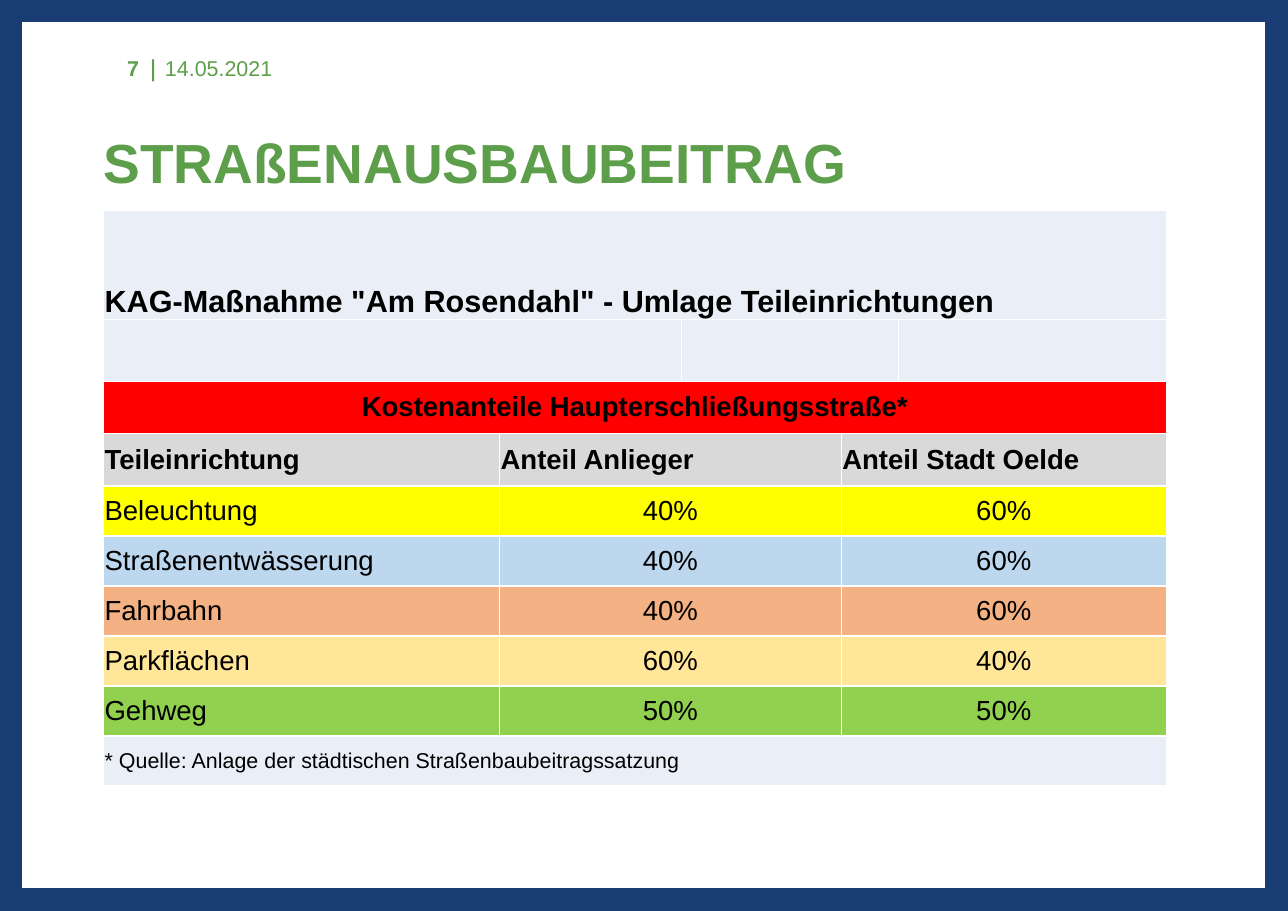
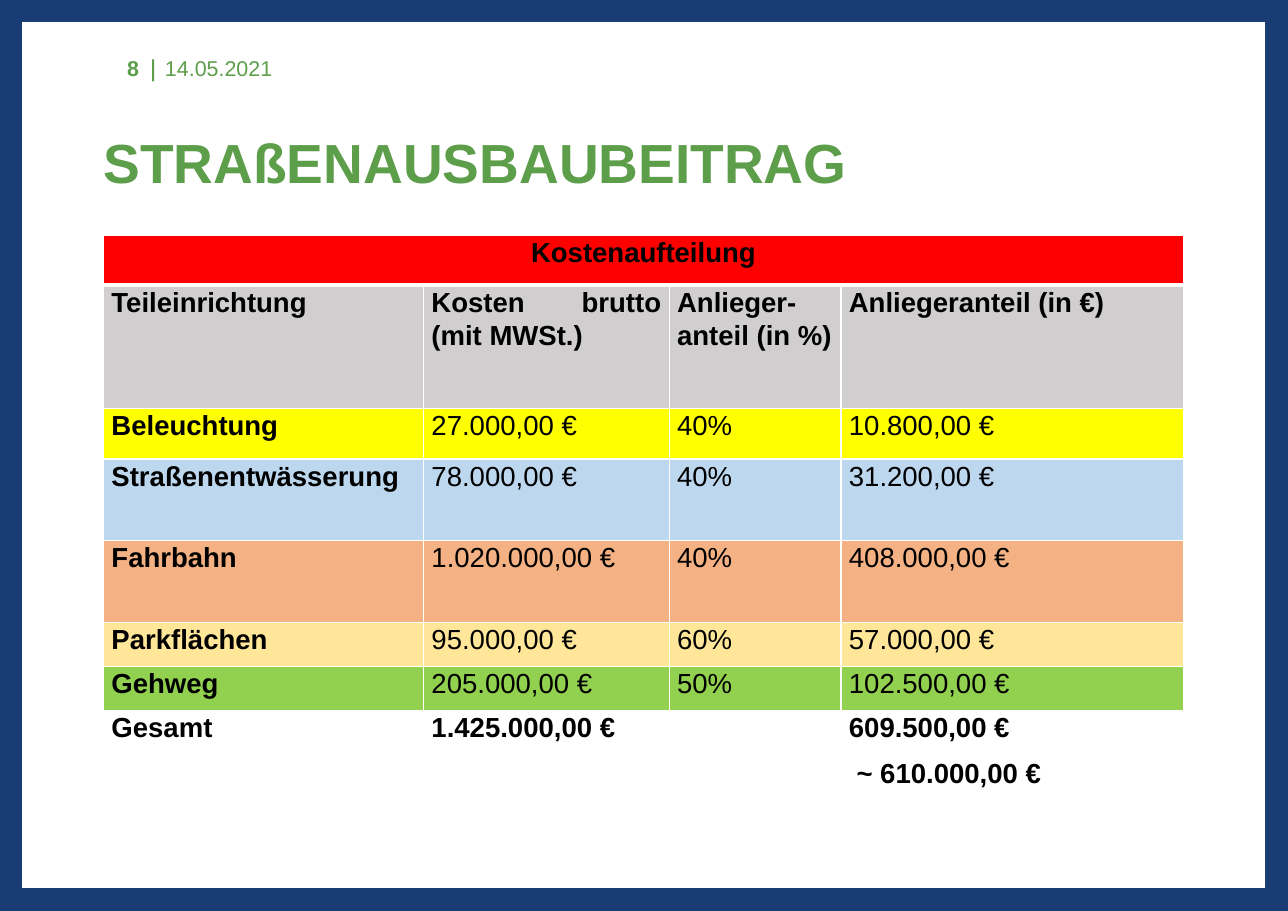
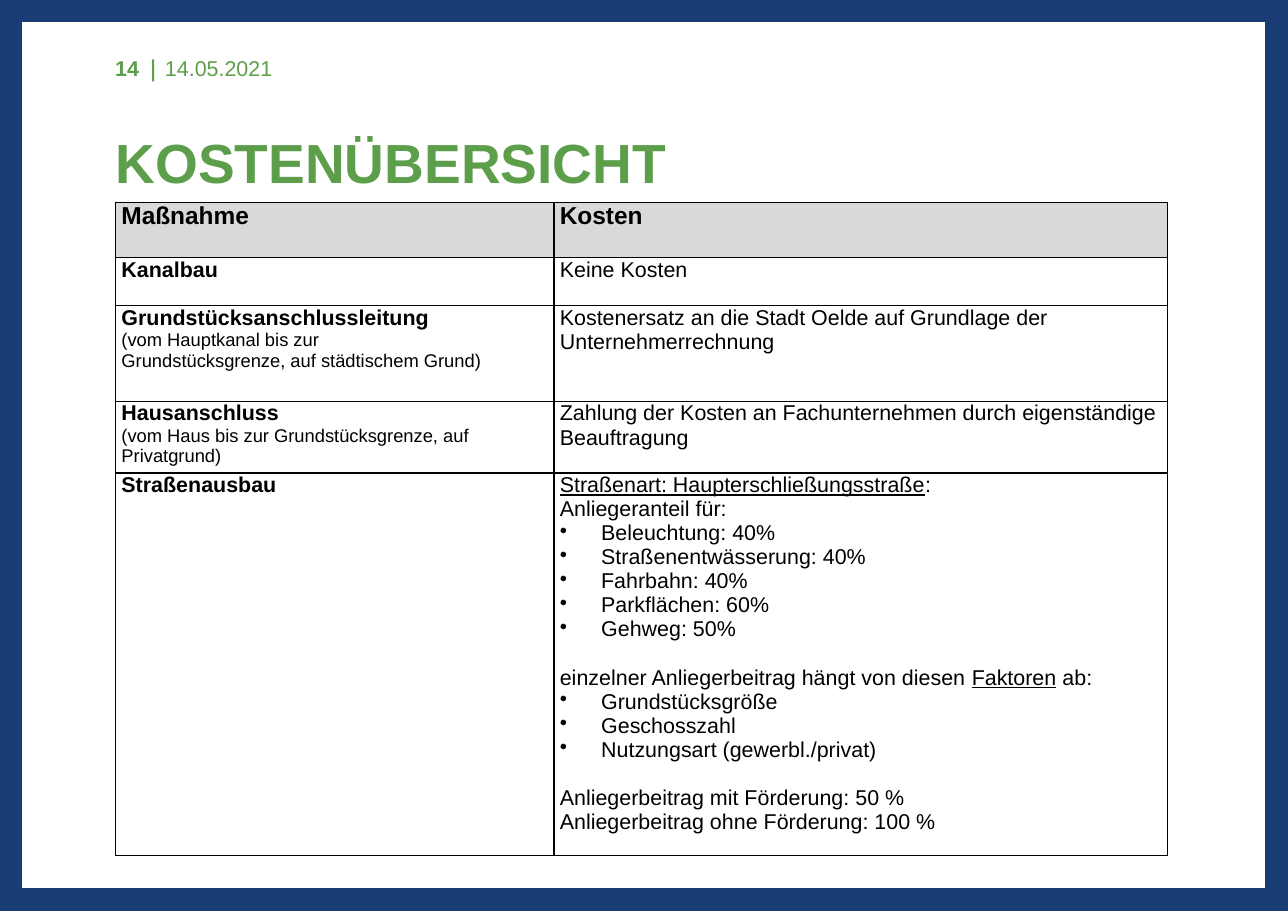
from dataclasses import dataclass

from lxml.etree import SubElement
from pptx import Presentation
from pptx.dml.color import RGBColor
from pptx.enum.shapes import MSO_SHAPE
from pptx.enum.text import MSO_ANCHOR, MSO_AUTO_SIZE, PP_ALIGN
from pptx.oxml.ns import qn
from pptx.util import Pt

# Palette
NAVY, GREEN, BLACK, WHITE = "193C75", "5D9E4A", "000000", "FFFFFF"
RED, PALE, SILVER, GREY = "FF0000", "EAEFF7", "D9D9D9", "D0CECE"
PART_COLORS = ["FFFF00", "BDD7EE", "F4B183", "FFE699", "92D050"]

# Content used on several slides
PARTS = ["Beleuchtung", "Straßenentwässerung", "Fahrbahn", "Parkflächen", "Gehweg"]
RESIDENT_SHARES = [40, 40, 40, 60, 50]
DATE = "14.05.2021"


def rgb(hex_color):
    return RGBColor.from_string(hex_color)


@dataclass
class Para:
    text: str
    size: float = None
    bold: bool = None
    underlined: str = ""
    bullet: bool = False
    indent: float = 0
    before: float = 0


class Deck:
    font = "Arial"

    def __init__(self, width, height):
        self.prs = Presentation()
        self.prs.slide_width, self.prs.slide_height = Pt(width), Pt(height)
        self.slide = None

    def new_slide(self, heading, number, left):
        """Start a slide with frame, page header and title."""
        self.slide = self.prs.slides.add_slide(self.prs.slide_layouts[5])
        border = self.rect(7.2, 7.2, 827.6, 581)
        border.fill.background()
        border.line.color.rgb = rgb(NAVY)
        border.line.width = Pt(15)
        SubElement(border.line._get_or_add_ln(), qn("a:miter"), lim="800000")

        divider = self.rect(99.4, 38.9, 1.4, 14.4)
        divider.fill.solid()
        divider.fill.fore_color.rgb = rgb(GREEN)
        divider.line.fill.background()

        self.header_text(100.8, 189.4, DATE)
        self.header_text(36, 62, str(number), bold=True, align=PP_ALIGN.RIGHT)

        title = self.slide.shapes.title
        title.left, title.top, title.width, title.height = Pt(left), Pt(89.3), Pt(608), Pt(48)
        frame = title.text_frame
        frame.auto_size = MSO_AUTO_SIZE.NONE
        frame.vertical_anchor = MSO_ANCHOR.TOP
        frame.margin_left = frame.margin_right = frame.margin_top = frame.margin_bottom = 0
        self.set_paras(frame, [heading], 36, True, GREEN, spacing=Pt(38))

    def rect(self, left, top, width, height):
        shape = self.slide.shapes.add_shape(
            MSO_SHAPE.RECTANGLE, Pt(left), Pt(top), Pt(width), Pt(height))
        shape.shadow.inherit = False
        return shape

    def header_text(self, left, width, text, bold=False, align=PP_ALIGN.LEFT):
        box = self.slide.shapes.add_textbox(Pt(left), Pt(28.8), Pt(width), Pt(31.7))
        box.text_frame.word_wrap = True
        box.text_frame.vertical_anchor = MSO_ANCHOR.MIDDLE
        self.set_paras(box.text_frame, [text], 14, bold, GREEN, align)

    def set_paras(self, frame, paras, size, bold=False, color=BLACK, align=PP_ALIGN.LEFT,
                  spacing=None, after=0):
        for index, item in enumerate(paras):
            para = item if isinstance(item, Para) else Para(item)
            line = frame.add_paragraph() if index else frame.paragraphs[0]
            if para.underlined:
                lead, marked, rest = para.text.partition(para.underlined)
                for piece in filter(None, (lead, marked, rest)):
                    run = line.add_run()
                    run.text = piece
                    run.font.underline = piece == marked
            else:
                line.text = para.text
            line.alignment = align
            line.space_before, line.space_after = Pt(para.before), Pt(after)
            if spacing:
                line.line_spacing = spacing
            props = line._p.get_or_add_pPr()
            if para.bullet:
                props.set("marL", str(Pt(27)))
                props.set("indent", str(-Pt(27)))
                SubElement(props, qn("a:buChar"), char="•")
            elif para.indent:
                props.set("marL", str(Pt(para.indent)))
            for run in line.runs:
                run.font.name = self.font
                run.font.size = Pt(para.size or size)
                run.font.bold = bold if para.bold is None else para.bold
                run.font.color.rgb = rgb(color)

    def table(self, left, top, columns, heights, line_color, inset, anchor):
        """Add an unfilled table with 1 pt rules around every cell."""
        table = self.slide.shapes.add_table(
            len(heights), len(columns), Pt(left), Pt(top),
            Pt(sum(columns)), Pt(sum(heights))).table
        table.first_row = table.horz_banding = False
        for column, width in zip(table.columns, columns):
            column.width = Pt(width)
        for row, height in zip(table.rows, heights):
            row.height = Pt(height)
        for cell in table.iter_cells():
            cell.margin_left = cell.margin_right = Pt(inset)
            cell.margin_top = cell.margin_bottom = 0
            cell.vertical_anchor = anchor
            props = cell._tc.get_or_add_tcPr()
            for side in ("a:lnL", "a:lnR", "a:lnT", "a:lnB"):
                rule = SubElement(props, qn(side), w=str(Pt(1)))
                SubElement(SubElement(rule, qn("a:solidFill")), qn("a:srgbClr"), val=line_color)
            cell.fill.background()
        return table

    def cell(self, table, row, column, paras=(), size=18, fill=None, span=1, **style):
        cell = table.cell(row, column)
        if span > 1:
            cell.merge(table.cell(row, column + span - 1))
        if fill:
            cell.fill.solid()
            cell.fill.fore_color.rgb = rgb(fill)
        self.set_paras(cell.text_frame, paras, size, **style)
        return cell


def cost_shares(deck):
    deck.new_slide("STRAßENAUSBAUBEITRAG", 7, 67.7)
    table = deck.table(67.7, 137.7, [258.9, 118.8, 104.6, 37.5, 175],
                       [71, 40.5, 34, 34.5] + [32.7] * 6, WHITE, 0.7, MSO_ANCHOR.MIDDLE)
    heading = deck.cell(table, 0, 0, ['KAG-Maßnahme "Am Rosendahl" - Umlage Teileinrichtungen'],
                        20, PALE, 5, bold=True)
    heading.vertical_anchor = MSO_ANCHOR.BOTTOM
    for column, span in ((0, 2), (2, 2), (4, 1)):
        deck.cell(table, 1, column, fill=PALE, span=span)
    deck.cell(table, 2, 0, ["Kostenanteile Haupterschließungsstraße*"], fill=RED, span=5,
              bold=True, align=PP_ALIGN.CENTER)

    places = ((0, 1), (1, 2), (3, 2))
    for (column, span), label in zip(places, ("Teileinrichtung", "Anteil Anlieger",
                                              "Anteil Stadt Oelde")):
        deck.cell(table, 3, column, [label], fill=SILVER, span=span, bold=True)
    for row, (part, share, color) in enumerate(zip(PARTS, RESIDENT_SHARES, PART_COLORS), 4):
        for (column, span), text in zip(places, (part, f"{share}%", f"{100 - share}%")):
            deck.cell(table, row, column, [text], fill=color, span=span,
                      align=PP_ALIGN.CENTER if column else PP_ALIGN.LEFT)
    deck.cell(table, 9, 0, ["* Quelle: Anlage der städtischen Straßenbaubeitragssatzung"],
              14, PALE, 5)


def cost_split(deck):
    deck.new_slide("STRAßENAUSBAUBEITRAG", 8, 67.7)
    table = deck.table(67.7, 153.8, [209.2, 160.6, 112.3, 223.9],
                       [32.5, 80.6, 33.1, 53.5, 53.5, 28.8, 28.8, 57], WHITE, 5.2,
                       MSO_ANCHOR.TOP)
    style = dict(spacing=1.07, after=8)
    banner = deck.cell(table, 0, 0, ["Kostenaufteilung"], fill=RED, span=4, bold=True,
                       align=PP_ALIGN.CENTER, **style)
    banner._tc.tcPr.find(qn("a:lnB")).set("w", str(Pt(3)))

    style["align"] = PP_ALIGN.JUSTIFY
    labels = ["Teileinrichtung", "Kosten brutto (mit MWSt.)", "Anlieger-anteil (in %)",
              "Anliegeranteil (in €)"]
    for column, label in enumerate(labels):
        deck.cell(table, 1, column, [label], fill=GREY, bold=True, **style)

    costs = ["27.000,00 €", "78.000,00 €", "1.020.000,00 €", "95.000,00 €", "205.000,00 €"]
    amounts = ["10.800,00 €", "31.200,00 €", "408.000,00 €", "57.000,00 €", "102.500,00 €"]
    shares = [f"{share}%" for share in RESIDENT_SHARES]
    for row, (color, *texts) in enumerate(zip(PART_COLORS, PARTS, costs, shares, amounts), 2):
        for column, text in enumerate(texts):
            deck.cell(table, row, column, [text], fill=color, bold=column == 0, **style)

    totals = {0: ["Gesamt"], 1: ["1.425.000,00 €"],
              3: ["609.500,00 €", Para("~ 610.000,00 €", indent=5)]}
    for column, paras in totals.items():
        deck.cell(table, 7, column, paras, bold=True, **style)


def cost_overview(deck):
    deck.new_slide("KOSTENÜBERSICHT", 14, 75.6)
    table = deck.table(75.6, 132.5, [286.6, 401], [36, 31.3, 62.6, 46.8, 236], BLACK, 3.8,
                       MSO_ANCHOR.TOP)
    for column, label in enumerate(("Maßnahme", "Kosten")):
        deck.cell(table, 0, column, [label], 16, SILVER, bold=True)

    road_costs = [
        Para("Straßenart: Haupterschließungsstraße:",
             underlined="Straßenart: Haupterschließungsstraße"),
        "Anliegeranteil für:",
        *[Para(f"{part}: {share}%", bullet=True) for part, share in zip(PARTS, RESIDENT_SHARES)],
        Para("einzelner Anliegerbeitrag hängt von diesen Faktoren ab:",
             underlined="Faktoren", before=15.75),
        *[Para(factor, bullet=True) for factor in
          ("Grundstücksgröße", "Geschosszahl", "Nutzungsart (gewerbl./privat)")],
        Para("Anliegerbeitrag mit Förderung: 50 %", before=15.75),
        "Anliegerbeitrag ohne Förderung: 100 %",
    ]
    measures = [
        ("Kanalbau", "", ["Keine Kosten"]),
        ("Grundstücksanschlussleitung",
         "(vom Hauptkanal bis zur\vGrundstücksgrenze, auf städtischem Grund)",
         ["Kostenersatz an die Stadt Oelde auf Grundlage der Unternehmerrechnung"]),
        ("Hausanschluss", "(vom Haus bis zur Grundstücksgrenze, auf Privatgrund)",
         ["Zahlung der Kosten an Fachunternehmen durch eigenständige Beauftragung"]),
        ("Straßenausbau", "", road_costs),
    ]
    for row, (measure, extent, costs) in enumerate(measures, 1):
        details = [Para(extent, size=12)] if extent else []
        deck.cell(table, row, 0, [Para(measure, bold=True)] + details, 14)
        deck.cell(table, row, 1, costs, 14)


def main():
    deck = Deck(842, 595.4)
    cost_shares(deck)
    cost_split(deck)
    cost_overview(deck)
    deck.prs.save("out.pptx")


if __name__ == "__main__":
    main()
